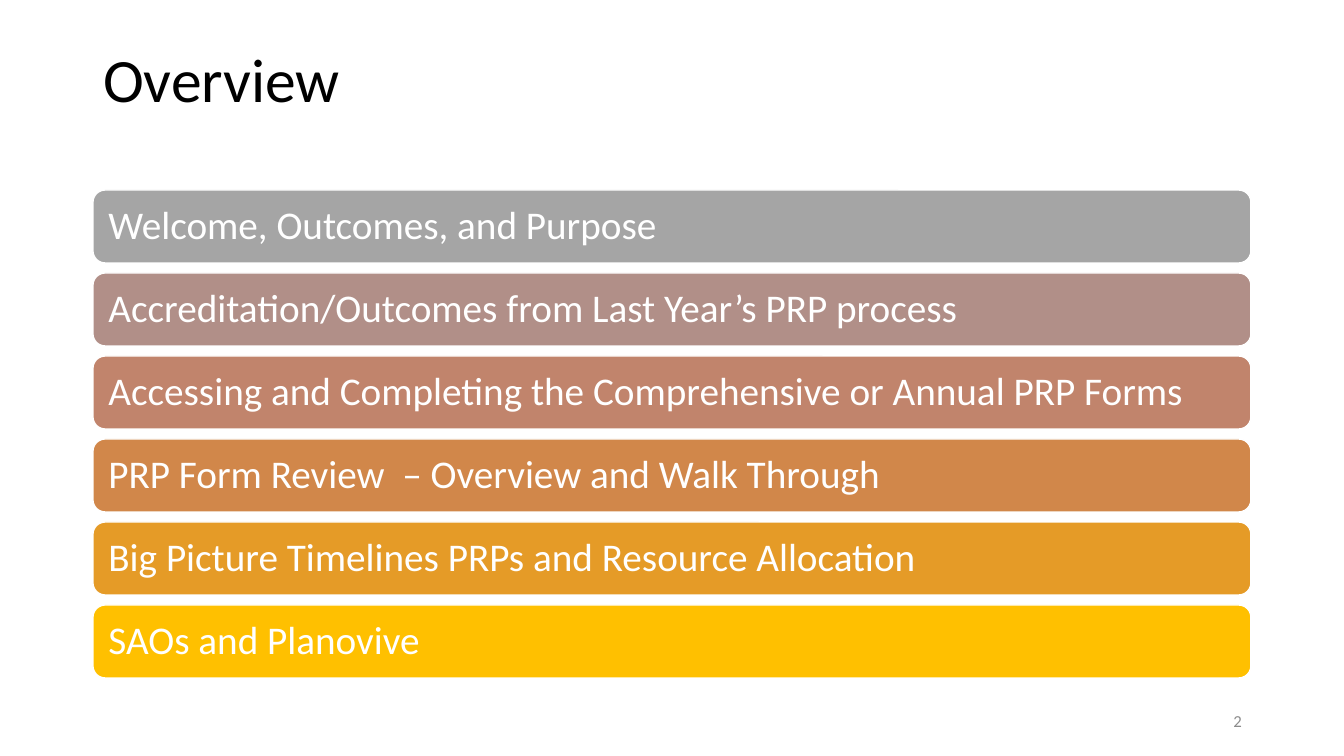
from dataclasses import dataclass

from pptx import Presentation
from pptx.dml.color import RGBColor
from pptx.enum.shapes import MSO_SHAPE as Preset
from pptx.enum.text import MSO_ANCHOR as Anchor, MSO_AUTO_SIZE as AutoSize, PP_ALIGN as Align
from pptx.slide import Slide
from pptx.text.text import TextFrame
from pptx.util import Emu, Pt

EMU_PER_PX = 914400 / 100.8
FONT = "Calibri"
WHITE = "FFFFFF"
LEFT, WIDTH = 93, 1158
FIRST_TOP, BAR_HEIGHT, BAR_PITCH = 190, 73, 83


@dataclass(frozen=True)
class Topic:
    """One agenda bar."""
    wording: str
    fill: str


TOPICS = [
    Topic("Welcome, Outcomes, and Purpose", "A5A5A5"),
    Topic("Accreditation/Outcomes from Last Year’s PRP process", "B18F88"),
    Topic("Accessing and Completing the Comprehensive or Annual PRP Forms", "C1846C"),
    Topic("PRP Form Review  – Overview and Walk Through", "D1874A"),
    Topic("Big Picture Timelines PRPs and Resource Allocation", "E59B27"),
    Topic("SAOs and Planovive", "FFC000"),
]


def px(length: int) -> Emu:
    """Turn pixels into EMU."""
    return Emu(round(length * EMU_PER_PX))


def colour(code: str) -> RGBColor:
    """Turn a hex string into a colour."""
    return RGBColor.from_string(code)


def write(frame: TextFrame, wording: str, size: int, code: str,
          align: Align = Align.LEFT, spacing: float = 0.9) -> None:
    """Put one formatted, vertically centred line into a text frame."""
    frame.text = wording
    frame.word_wrap = True
    frame.auto_size = AutoSize.NONE
    frame.vertical_anchor = Anchor.MIDDLE
    line = frame.paragraphs[0]
    line.alignment = align
    line.line_spacing = spacing
    font = line.runs[0].font
    font.name = FONT
    font.size = Pt(size)
    font.color.rgb = colour(code)


def add_title(slide: Slide) -> None:
    """Place the heading in the title placeholder."""
    heading = slide.shapes.title
    heading.left, heading.top = px(LEFT), px(27)
    heading.width, heading.height = px(WIDTH), px(111)
    write(heading.text_frame, "Overview", 44, "000000")


def add_topic(slide: Slide, topic: Topic, top: int) -> None:
    """Draw one rounded agenda bar."""
    bar = slide.shapes.add_shape(Preset.ROUNDED_RECTANGLE, px(LEFT), px(top),
                                 px(WIDTH), px(BAR_HEIGHT))
    bar.shadow.inherit = False
    bar.fill.solid()
    bar.fill.fore_color.rgb = colour(topic.fill)
    bar.line.color.rgb = colour(WHITE)
    bar.line.width = Pt(1)
    frame = bar.text_frame
    write(frame, topic.wording, 28, WHITE)
    frame.margin_left = frame.margin_right = px(12)


def add_page_number(slide: Slide) -> None:
    """Write the page number at the lower right."""
    page_number = slide.shapes.add_textbox(px(950), px(701), px(302), px(40))
    write(page_number.text_frame, "2", 12, "8C8C8C", Align.RIGHT, 1.0)


def main() -> None:
    """Build and save the overview slide."""
    deck = Presentation()
    deck.slide_width, deck.slide_height = px(1344), px(756)
    slide = deck.slides.add_slide(deck.slide_layouts[5])
    add_title(slide)
    for row, topic in enumerate(TOPICS):
        add_topic(slide, topic, FIRST_TOP + row * BAR_PITCH)
    add_page_number(slide)
    deck.save("out.pptx")


if __name__ == "__main__":
    main()
